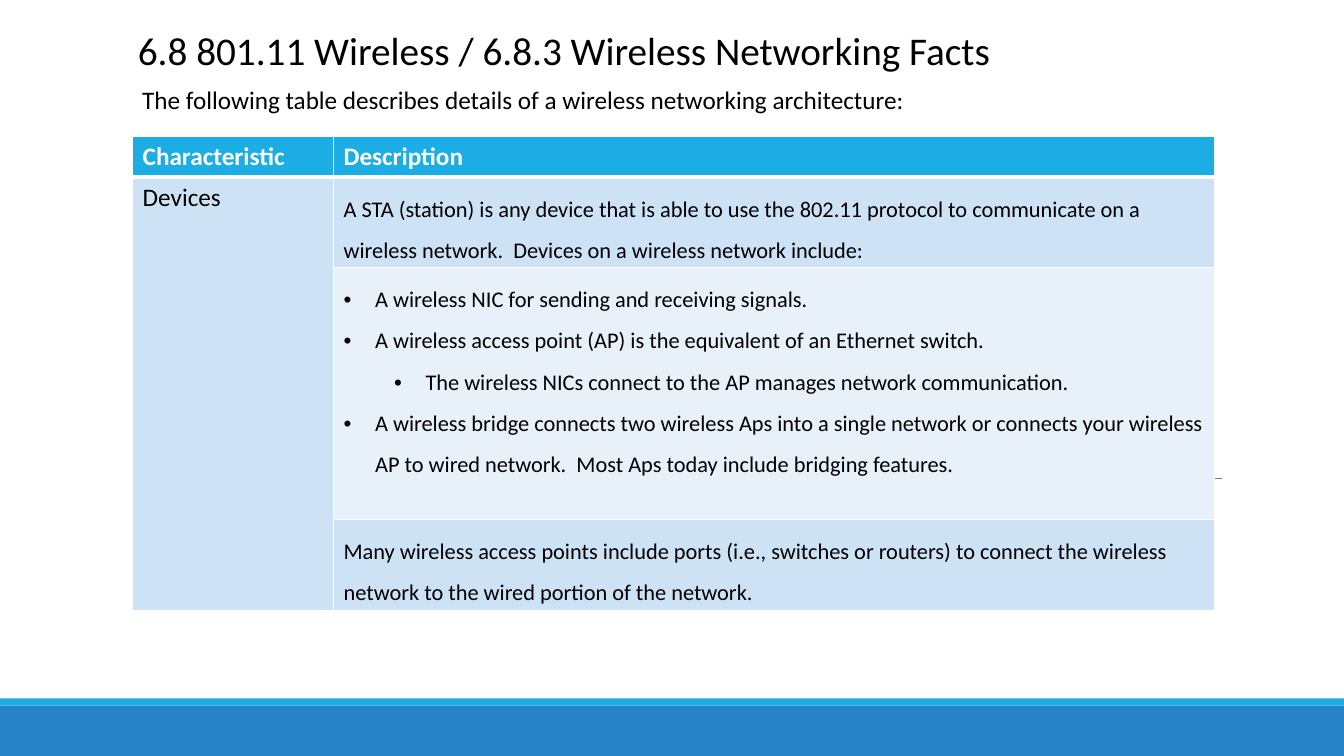
import pptx
import pptx.util
import pptx.dml.color
import pptx.enum.shapes
import pptx.enum.text
import pptx.oxml.ns
import lxml.etree

Pt = pptx.util.Pt
qn = pptx.oxml.ns.qn


def rgb(color):
    return pptx.dml.color.RGBColor.from_string(color)


def add_text(tf, text, size=16, color="000000", bold=False, align=None,
             spacing=None, indent=None, first=True):
    p = tf.paragraphs[0] if first else tf.add_paragraph()
    if align is not None:
        p.alignment = align
    if spacing:
        p.line_spacing = spacing
    if indent:
        pPr = p._p.get_or_add_pPr()
        pPr.set("marL", str(Pt(indent)))
        pPr.set("indent", str(-Pt(22.5)))
        bullet_font = lxml.etree.SubElement(pPr, qn("a:buFont"))
        bullet_font.set("typeface", "Arial")
        lxml.etree.SubElement(pPr, qn("a:buChar")).set("char", "•")
    r = p.add_run()
    r.text = text
    r.font.name = "Calibri"
    r.font.size = Pt(size)
    r.font.bold = bold
    r.font.color.rgb = rgb(color)


prs = pptx.Presentation()
prs.slide_width, prs.slide_height = Pt(960), Pt(540)
s = prs.slides.add_slide(prs.slide_layouts[6])

for top, height, color in [(504, 36, "2683C6"), (498.75, 5.25, "1CADE4")]:
    sp = s.shapes.add_shape(pptx.enum.shapes.MSO_SHAPE.RECTANGLE,
                            Pt(0), Pt(top), Pt(960), Pt(height))
    sp.shadow.inherit = False
    sp.fill.solid()
    sp.fill.fore_color.rgb = rgb(color)
    sp.line.fill.background()

rule = s.shapes.add_connector(pptx.enum.shapes.MSO_CONNECTOR.STRAIGHT,
                              Pt(95), Pt(342), Pt(872.75), Pt(342))
rule.line.color.rgb = rgb("808080")
rule.line.width = Pt(0.5)
lxml.etree.SubElement(rule._element.spPr, qn("a:effectLst"))

headings = [
    ("6.8 801.11 Wireless / 6.8.3 Wireless Networking Facts",
     60, 15, 685.5, 41, 28, pptx.enum.text.PP_ALIGN.CENTER),
    ("The following table describes details of a wireless networking architecture:",
     94.5, 56.5, 708.5, 29, 18, pptx.enum.text.PP_ALIGN.LEFT),
]
for text, left, top, width, height, size, align in headings:
    tf = s.shapes.add_textbox(Pt(left), Pt(top), Pt(width), Pt(height)).text_frame
    tf.word_wrap = True
    tf.auto_size = pptx.enum.text.MSO_AUTO_SIZE.SHAPE_TO_FIT_TEXT
    add_text(tf, text, size=size, align=align)

widths = [143.5, 629]
heights = [29, 64, 180, 64]
table = s.shapes.add_table(len(heights), len(widths), Pt(94.75), Pt(97.5),
                           Pt(sum(widths)), Pt(sum(heights))).table
for column, width in zip(table.columns, widths):
    column.width = Pt(width)
for row, height in zip(table.rows, heights):
    row.height = Pt(height)

row_fills = ["1CADE4", "CDE3F5", "E8F1FA", "CDE3F5"]
for i, row in enumerate(table.rows):
    for j, cell in enumerate(row.cells):
        tcPr = cell._tc.get_or_add_tcPr()
        for side in ("L", "R", "T", "B"):
            thick = (i == 0 and side == "B") or (i == 1 and side == "T")
            ln = lxml.etree.SubElement(tcPr, qn("a:ln" + side))
            ln.set("w", str(Pt(3 if thick else 1)))
            fill = lxml.etree.SubElement(ln, qn("a:solidFill"))
            lxml.etree.SubElement(fill, qn("a:srgbClr")).set("val", "FFFFFF")
        cell.fill.solid()
        cell.fill.fore_color.rgb = rgb(row_fills[i] if j else row_fills[min(i, 1)])
table.cell(1, 0).merge(table.cell(3, 0))

for j, text in enumerate(["Characteristic", "Description"]):
    add_text(table.cell(0, j).text_frame, text, size=18, color="FFFFFF", bold=True)
add_text(table.cell(1, 0).text_frame, "Devices", size=18)

add_text(table.cell(1, 1).text_frame,
         "A STA (station) is any device that is able to use the 802.11 protocol to "
         "communicate on a wireless network.  Devices on a wireless network include:",
         spacing=1.5)
devices = [
    (0, "A wireless NIC for sending and receiving signals."),
    (0, "A wireless access point (AP) is the equivalent of an Ethernet switch."),
    (1, "The wireless NICs connect to the AP manages network communication."),
    (0, "A wireless bridge connects two wireless Aps into a single network or connects "
        "your wireless AP to wired network.  Most Aps today include bridging features."),
]
tf = table.cell(2, 1).text_frame
for k, (level, text) in enumerate(devices):
    add_text(tf, text, spacing=1.5, indent=22.5 + 36 * level, first=k == 0)
    tf.paragraphs[k].level = level
add_text(table.cell(3, 1).text_frame,
         "Many wireless access points include ports (i.e., switches or routers) to connect "
         "the wireless network to the wired portion of the network.",
         spacing=1.5)

prs.save("out.pptx")
